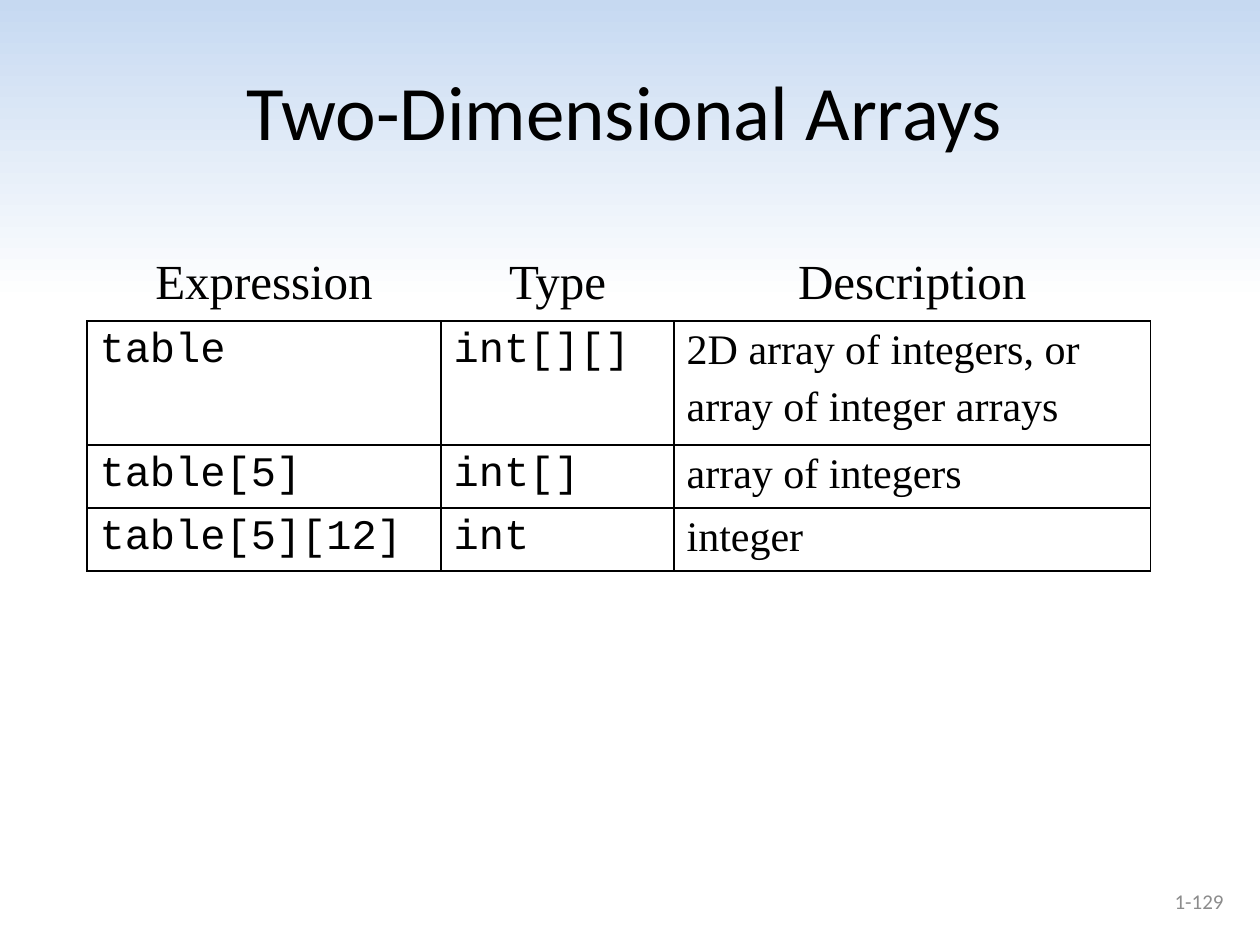
from lxml import etree
from pptx import Presentation
from pptx.dml.color import RGBColor
from pptx.enum import text
from pptx.oxml import ns
from pptx.util import Inches, Pt

theme = {
    "ink": "000000", "gray": "8C8C8C", "sky": "C6D9F1", "base": "FFFFFF",
    "sans": "Calibri", "serif": "Times New Roman", "mono": "Courier New",
    "title": 44, "head": 28, "body": 24, "foot": 12,
}

deck = Presentation()
deck.slide_width, deck.slide_height = Inches(10), Inches(7.5)
col, row = deck.slide_width / 100, deck.slide_height / 100
slide = deck.slides.add_slide(deck.slide_layouts[6])


def grid(left, top, wide, high):
    return int(left * col), int(top * row), int(wide * col), int(high * row)


def write(para, words, face, size, tone, align, gap=0):
    run = para.add_run()
    run.text = words
    para.alignment = align
    form = {"name": theme[face], "size": Pt(theme[size])}
    for key, value in form.items():
        setattr(run.font, key, value)
    run.font.color.rgb = RGBColor.from_string(theme[tone])
    if gap:
        space = etree.Element(ns.qn("a:spcBef"))
        etree.SubElement(space, ns.qn("a:spcPct"), val=str(gap * 1000))
        para._p.get_or_add_pPr().insert(0, space)


left, mid, right = text.PP_ALIGN.LEFT, text.PP_ALIGN.CENTER, text.PP_ALIGN.RIGHT

fill = slide.background.fill
fill.gradient()
fill.gradient_angle = 90
for stop, (spot, tone) in zip(fill.gradient_stops, [(0.68, "base"), (1, "sky")]):
    stop.position = spot
    stop.color.rgb = RGBColor.from_string(theme[tone])

labels = [
    ("Two-Dimensional Arrays", (1.7, 4.4, 95.8, 14.53), "title", "ink", mid),
    ("1-129", (74.8, 92.67, 23.3, 5.33), "foot", "gray", right),
]
for words, area, size, tone, align in labels:
    frame = slide.shapes.add_textbox(*grid(*area)).text_frame
    frame.word_wrap = True
    frame.vertical_anchor = text.MSO_ANCHOR.MIDDLE
    write(frame.paragraphs[0], words, "sans", size, tone, align)

rows = [
    ["Expression", "Type", "Description"],
    ["table", "int[][]", "2D array of integers, or\narray of integer arrays"],
    ["table[5]", "int[]", "array of integers"],
    ["table[5][12]", "int", "integer"],
]
wides = [28.1, 18.5, 37.8]
highs = [5.87, 11.2, 5.87, 5.87]
area = grid(6.9, 26.4, sum(wides), sum(highs))
table = slide.shapes.add_table(len(rows), len(wides), *area).table
table.first_row = table.horz_banding = False
for item, wide in zip(table.columns, wides):
    item.width = int(wide * col)
for item, high in zip(table.rows, highs):
    item.height = int(high * row)

for y, line in enumerate(rows):
    for x, words in enumerate(line):
        cell = table.cell(y, x)
        cell.fill.background()
        face = "serif" if y == 0 or x == 2 else "mono"
        size, align = ("head", mid) if y == 0 else ("body", left)
        parts = words.split("\n")
        for n, part in enumerate(parts):
            frame = cell.text_frame
            para = frame.add_paragraph() if n else frame.paragraphs[0]
            write(para, part, face, size, "ink", align, 50 // len(parts))
        props = cell._tc.get_or_add_tcPr()
        for n, side in enumerate("LRTB"):
            edge = etree.Element(ns.qn("a:ln" + side), w=str(Pt(1)))
            if y or side == "B":
                paint = etree.SubElement(edge, ns.qn("a:solidFill"))
                etree.SubElement(paint, ns.qn("a:srgbClr"), val=theme["ink"])
            else:
                etree.SubElement(edge, ns.qn("a:noFill"))
            props.insert(n, edge)

deck.save("out.pptx")
